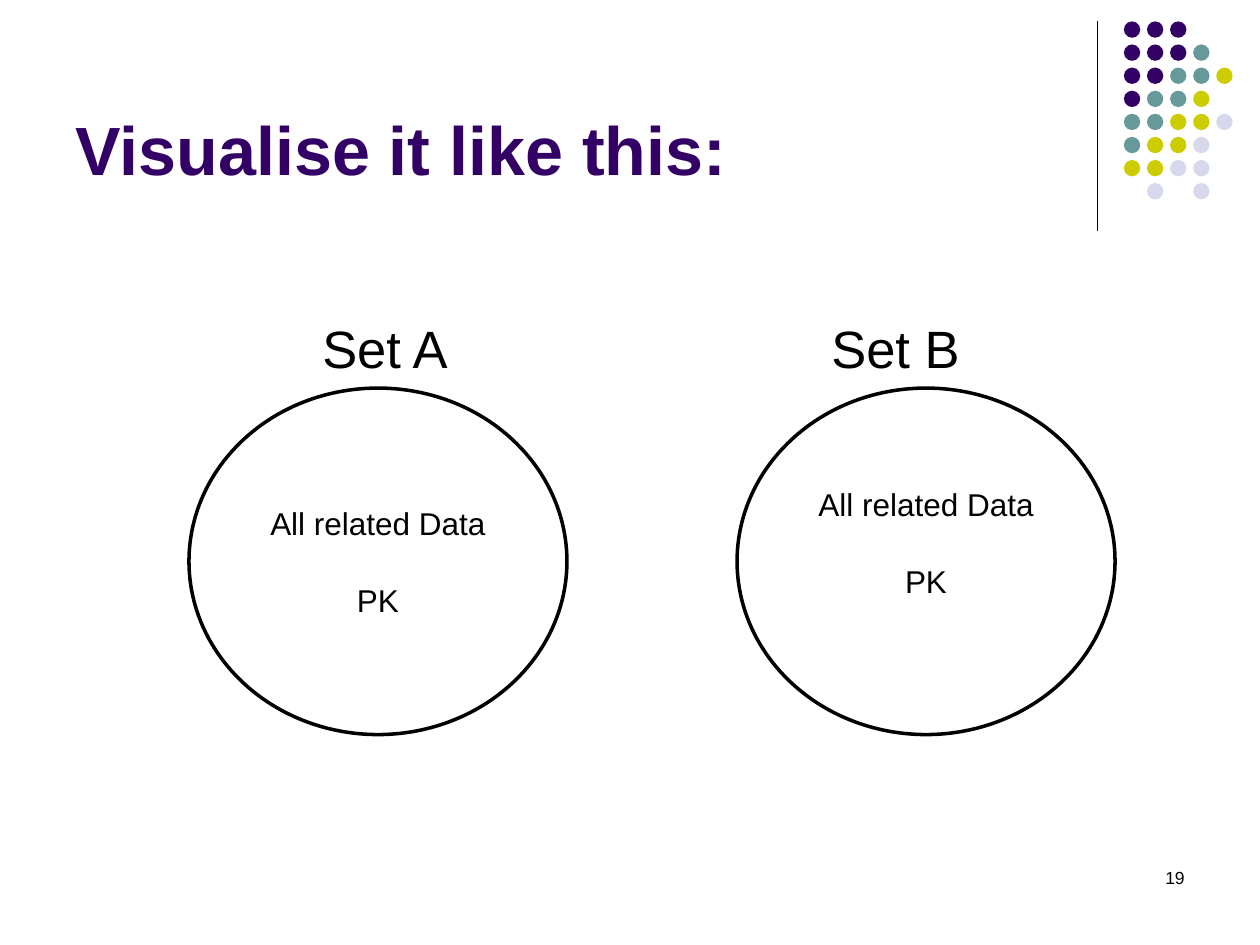
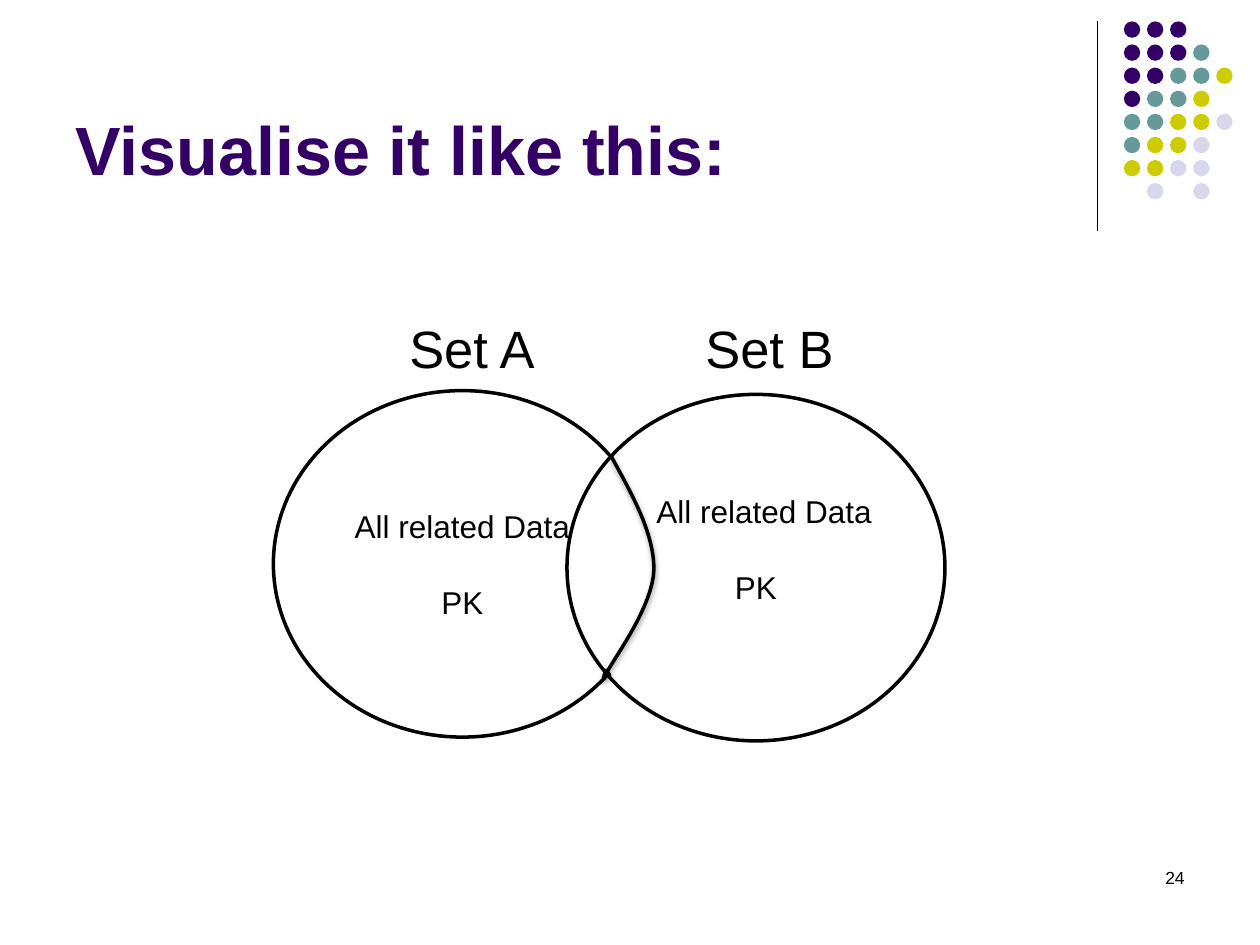
from dataclasses import dataclass
from typing import Any

from lxml.etree import SubElement
from pptx import Presentation
from pptx.dml.color import RGBColor
from pptx.enum.shapes import MSO_CONNECTOR, MSO_SHAPE
from pptx.enum.text import MSO_ANCHOR, PP_ALIGN
from pptx.oxml.ns import qn
from pptx.util import Inches, Pt

Point = tuple[float, float]

FONT = "Arial"
BLACK, WHITE, PURPLE = "000000", "FFFFFF", "330066"
DOT_COLORS = {"P": PURPLE, "T": "669999", "Y": "CCCC00", "L": "D8D8EC"}
DOT_ROWS = ["PPP", "PPPT", "PPTTY", "PTTY", "TTYYL", "TYYL", "YYLL", " L L"]
DOT_SIZE, DOT_PITCH = 0.13, 0.55 / 3
DOT_LEFT, DOT_TOP = 8.92, 0.17
CIRCLE_WIDTH, CIRCLE_HEIGHT = 3, 2.75
TITLE = "Visualise it like this:"
LENS_START = (4.85, 3.62)
LENS_CURVES = [
    ((5.02, 3.93), (5.19, 4.23), (5.19, 4.52)),
    ((5.18, 4.81), (4.89, 5.2), (4.82, 5.33)),
    ((4.76, 5.46), (4.81, 5.31), (4.81, 5.32)),
    ((4.81, 5.32), (4.84, 5.36), (4.84, 5.36)),
    ((4.84, 5.36), (4.82, 5.33), (4.82, 5.33)),
]


@dataclass(frozen=True)
class SetCircle:
    left: float
    top: float
    raise_by: float = 0
    indent: float = 0


@dataclass(frozen=True)
class SetSlide:
    number: str
    label_tabs: tuple[float, float]
    circles: tuple[SetCircle, SetCircle]
    overlaps: bool = False


SLIDES = [
    SetSlide("19", (1.96, 6),
             (SetCircle(1.5, 3.08), SetCircle(5.85, 3.08, 0.3))),
    SetSlide("24", (2.65, 5),
             (SetCircle(2.17, 3.1), SetCircle(4.5, 3.13, 0.3, 0.13)), True),
]


def rgb(color: str) -> RGBColor:
    return RGBColor.from_string(color)


def set_attrs(target: Any, values: dict[str, Any]) -> None:
    for name, value in values.items():
        setattr(target, name, value)


def write(p: Any, text: str, size: float, color: str = BLACK, bold: bool = False) -> None:
    r = p.add_run()
    r.text = text
    set_attrs(r.font, {"name": FONT, "size": Pt(size), "bold": bold})
    r.font.color.rgb = rgb(color)


def add_text_box(slide: Any, left: float, top: float, width: float, height: float) -> Any:
    tf = slide.shapes.add_textbox(
        Inches(left), Inches(top), Inches(width), Inches(height)).text_frame
    tf.word_wrap = True
    return tf


def add_ellipse(shapes: Any, left: float, top: float, width: float, height: float,
                fill: str) -> Any:
    sp = shapes.add_shape(MSO_SHAPE.OVAL, Inches(left), Inches(top),
                          Inches(width), Inches(height))
    sp.shadow.inherit = False
    sp.fill.solid()
    sp.fill.fore_color.rgb = rgb(fill)
    sp.line.fill.background()
    return sp


def set_line(sp: Any, width: float) -> None:
    sp.line.color.rgb = rgb(BLACK)
    sp.line.width = Pt(width)


def add_corner(slide: Any) -> None:
    rule = slide.shapes.add_connector(
        MSO_CONNECTOR.STRAIGHT, Inches(8.71), Inches(0.17), Inches(8.71), Inches(1.83))
    set_line(rule, 0.75)
    SubElement(rule._element.spPr, qn("a:effectLst"))
    dots = slide.shapes.add_group_shape()
    for row, codes in enumerate(DOT_ROWS):
        for col, code in enumerate(codes):
            if code in DOT_COLORS:
                add_ellipse(dots.shapes, DOT_LEFT + col * DOT_PITCH,
                            DOT_TOP + row * DOT_PITCH, DOT_SIZE, DOT_SIZE,
                            DOT_COLORS[code])


def add_title(slide: Any) -> None:
    title = slide.shapes.title
    set_attrs(title, {"left": Inches(0.5), "top": Inches(0.13),
                      "width": Inches(8.25), "height": Inches(1.42)})
    tf = title.text_frame
    set_attrs(tf, {"vertical_anchor": MSO_ANCHOR.BOTTOM, "word_wrap": True})
    p = tf.paragraphs[0]
    p.alignment = PP_ALIGN.LEFT
    write(p, TITLE, 39, PURPLE, True)


def add_labels(slide: Any, tabs: tuple[float, float]) -> None:
    tf = add_text_box(slide, 0.5, 1.88, 9, 4.82)
    tf.margin_top = Inches(0.63)
    p = tf.paragraphs[0]
    tab_list = SubElement(p._p.get_or_add_pPr(), qn("a:tabLst"))
    for tab in tabs:
        SubElement(tab_list, qn("a:tab"), pos=str(Inches(tab)), algn="l")
    write(p, "\tSet A\tSet B", 30)


def add_number(slide: Any, number: str) -> None:
    p = add_text_box(slide, 8.25, 6.83, 1.25, 0.5).paragraphs[0]
    p.alignment = PP_ALIGN.RIGHT
    write(p, number, 10)


def add_circle(slide: Any, circle: SetCircle) -> None:
    sp = add_ellipse(slide.shapes, circle.left, circle.top,
                     CIRCLE_WIDTH, CIRCLE_HEIGHT, WHITE)
    set_line(sp, 2)
    tf = sp.text_frame
    set_attrs(tf, {"word_wrap": True, "vertical_anchor": MSO_ANCHOR.MIDDLE,
                   "margin_bottom": Inches(0.05 + circle.raise_by)})
    data, key = tf.paragraphs[0], tf.add_paragraph()
    for p, text in ((data, "All related Data"), (key, "PK")):
        p.alignment = PP_ALIGN.CENTER
        write(p, text, 18)
    key.space_before = Pt(22)
    if circle.indent:
        data._p.get_or_add_pPr().set("marL", str(Inches(circle.indent)))


def curve_points(start: Point, curves: list[tuple[Point, Point, Point]],
                 steps: int = 16) -> list[Point]:
    points = [start]
    for c1, c2, end in curves:
        for step in range(1, steps + 1):
            t = step / steps
            u = 1 - t
            points.append(tuple(
                u**3 * a + 3 * u * u * t * b + 3 * u * t * t * c + t**3 * d
                for a, b, c, d in zip(start, c1, c2, end)))
        start = end
    return points


def add_lens_edge(slide: Any) -> None:
    first, *rest = [(Inches(x), Inches(y))
                    for x, y in curve_points(LENS_START, LENS_CURVES)]
    builder = slide.shapes.build_freeform(*first)
    builder.add_line_segments(rest, close=False)
    sp = builder.convert_to_shape()
    sp.fill.background()
    set_line(sp, 2)
    sp.shadow.inherit = False
    effects = sp._element.spPr.find(qn("a:effectLst"))
    shadow = SubElement(effects, qn("a:outerShdw"), blurRad=str(Pt(3.1)),
                        dist=str(Pt(1.6)), dir="5400000", rotWithShape="0")
    color = SubElement(shadow, qn("a:srgbClr"), val=BLACK)
    SubElement(color, qn("a:alpha"), val="38000")


def add_set_slide(prs: Any, content: SetSlide) -> None:
    slide = prs.slides.add_slide(prs.slide_layouts[5])
    add_corner(slide)
    add_title(slide)
    add_labels(slide, content.label_tabs)
    add_number(slide, content.number)
    for circle in content.circles:
        add_circle(slide, circle)
    if content.overlaps:
        add_lens_edge(slide)


def main() -> None:
    prs = Presentation()
    set_attrs(prs, {"slide_width": Inches(10), "slide_height": Inches(7.5)})
    for content in SLIDES:
        add_set_slide(prs, content)
    prs.save("out.pptx")


if __name__ == "__main__":
    main()
